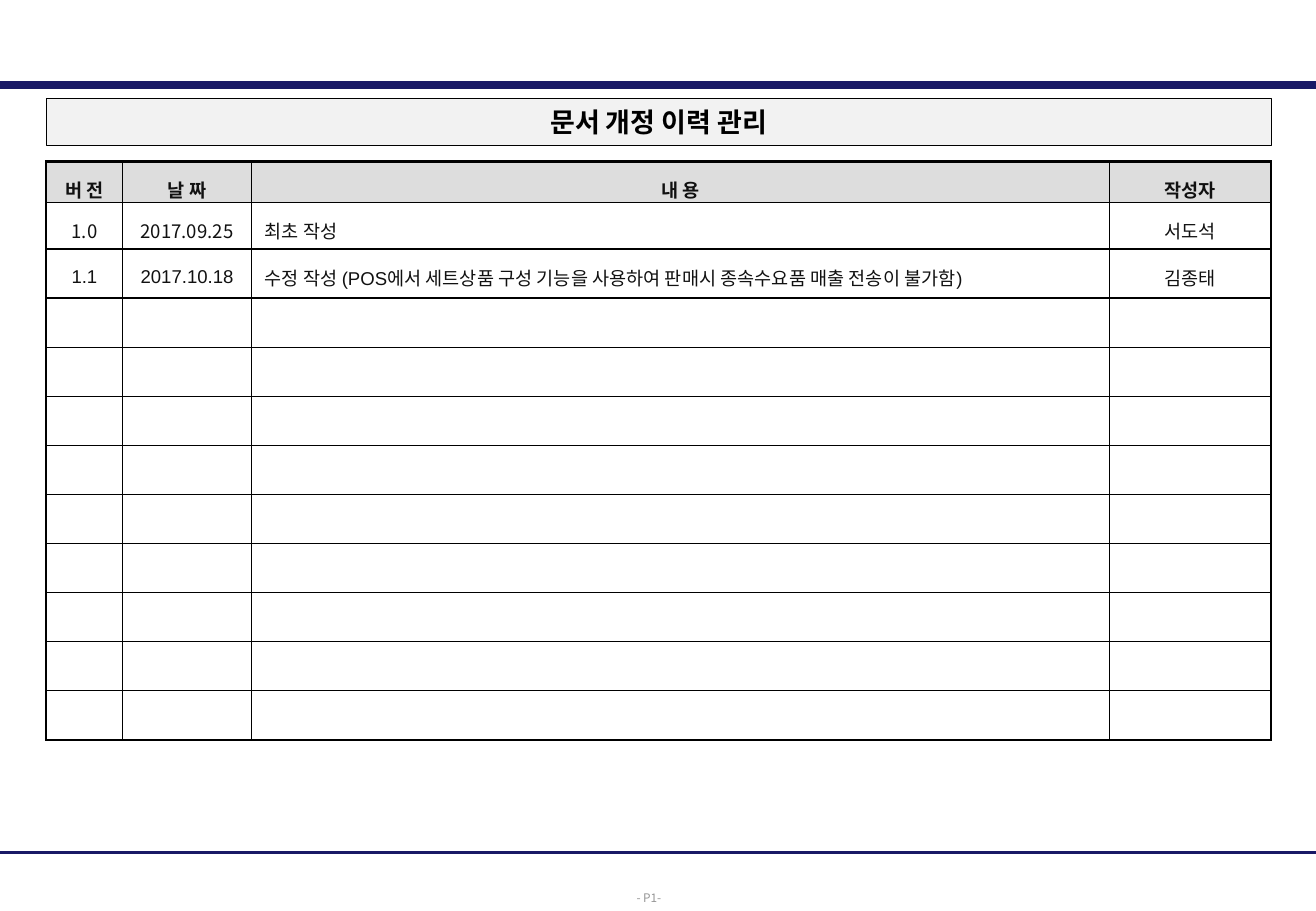
from lxml import etree
from pptx import Presentation
from pptx.dml.color import RGBColor
from pptx.enum.text import MSO_ANCHOR, PP_ALIGN
from pptx.oxml.ns import qn
from pptx.util import Inches, Pt

MID = MSO_ANCHOR.MIDDLE
LEFT, CENTER = PP_ALIGN.LEFT, PP_ALIGN.CENTER
WIDE, HIGH = 10.83, 7.5
EDGE, SPAN = 0.38, 10.08
SANS, NOTO = "Arial", "Noto Sans CJK KR"
HEX = {"navy": "191966", "black": "000000", "ink": "111111", "head": "DDDDDD",
       "band": "F2F2F2", "white": "FFFFFF", "page": "969696"}

COLS = [0.63, 1.06, 7.06, 1.33]
COUNT = 12
TEXTS = [
    ["버 전", "날 짜", "내 용", "작성자"],
    ["1.0", "2017.09.25", "최초 작성", "서도석"],
    ["1.1", "2017.10.18",
     "수정 작성 (POS에서 세트상품 구성 기능을 사용하여 판매시 종속수요품 매출 전송이 불가함)",
     "김종태"],
]
FACES = [SANS, NOTO, SANS]


def color(name):
    """Return the named colour."""
    return RGBColor.from_string(HEX[name])


def style(para, size, face, tint, bold=False, align=LEFT):
    """Set the font and alignment of a paragraph."""
    para.alignment = align
    font = para.font
    font.size, font.name, font.bold = Pt(size), face, bold
    font.color.rgb = color(tint)


def rule(slide, top, width):
    """Draw a navy line across the slide."""
    line = slide.shapes.add_connector(1, 0, Inches(top), Inches(WIDE), Inches(top))
    line.line.color.rgb = color("navy")
    line.line.width = Pt(width)
    etree.SubElement(line._element.spPr, qn("a:effectLst"))


def title(slide, left, top, width, height):
    """Place the title in a framed band."""
    box = slide.shapes.title
    box.left, box.top = Inches(left), Inches(top)
    box.width, box.height = Inches(width), Inches(height)
    box.fill.solid()
    box.fill.fore_color.rgb = color("band")
    box.line.color.rgb = color("black")
    box.line.width = Pt(0.5)
    frame = box.text_frame
    frame.text = "문서 개정 이력 관리"
    frame.vertical_anchor, frame.word_wrap = MID, False
    style(frame.paragraphs[0], 16, SANS, "black", True, CENTER)


def border(cell, row, col):
    """Draw the cell borders, thicker on the outer edge of the table."""
    props = cell._tc.get_or_add_tcPr()
    outer = {"L": col == 0, "R": col == len(COLS) - 1,
             "T": row == 0, "B": row == COUNT - 1}
    for side, thick in outer.items():
        line = etree.SubElement(props, qn("a:ln" + side), w=str(Pt(1.5 if thick else 0.75)))
        fill = etree.SubElement(line, qn("a:solidFill"))
        etree.SubElement(fill, qn("a:srgbClr"), val=HEX["black"])


def history(slide, left, top, width, height):
    """Build the table of revisions."""
    table = slide.shapes.add_table(COUNT, len(COLS), Inches(left), Inches(top),
                                   Inches(width), Inches(height)).table
    table.first_row = table.horz_banding = False
    for col, share in enumerate(COLS):
        table.columns[col].width = Inches(width * share / sum(COLS))
    first = [0.34, 0.38]
    rest = (height - sum(first)) / (COUNT - len(first))
    for row in range(COUNT):
        table.rows[row].height = Inches(first[row] if row < len(first) else rest)
        for col in range(len(COLS)):
            cell = table.cell(row, col)
            border(cell, row, col)
            cell.fill.solid()
            cell.fill.fore_color.rgb = color("white" if row else "head")
            cell.vertical_anchor = MID
            cell.margin_left = cell.margin_right = Inches(0.11)
            if row < len(TEXTS):
                cell.text = TEXTS[row][col]
                para = cell.text_frame.paragraphs[0]
                para.line_spacing = 1.3
                style(para, 11, FACES[row], "ink", row == 0,
                      LEFT if row and col == 2 else CENTER)


def footer(slide, left, top, width, height):
    """Write the page mark."""
    box = slide.shapes.add_textbox(Inches(left), Inches(top), Inches(width), Inches(height))
    box.text_frame.text = "- P1-"
    box.text_frame.word_wrap = False
    para = box.text_frame.paragraphs[0]
    para.line_spacing = 1.3
    style(para, 7, NOTO, "page")


def main():
    """Build and save the slide."""
    deck = Presentation()
    deck.slide_width, deck.slide_height = Inches(WIDE), Inches(HIGH)
    slide = deck.slides.add_slide(deck.slide_layouts[5])
    rule(slide, 0.7, 4.5)
    footer(slide, 5.14, 7.25, 0.5, 0.24)
    rule(slide, 7.02, 1.5)
    history(slide, EDGE, 1.33, SPAN, 4.76)
    title(slide, EDGE, 0.81, SPAN, 0.39)
    deck.save("out.pptx")


if __name__ == "__main__":
    main()
